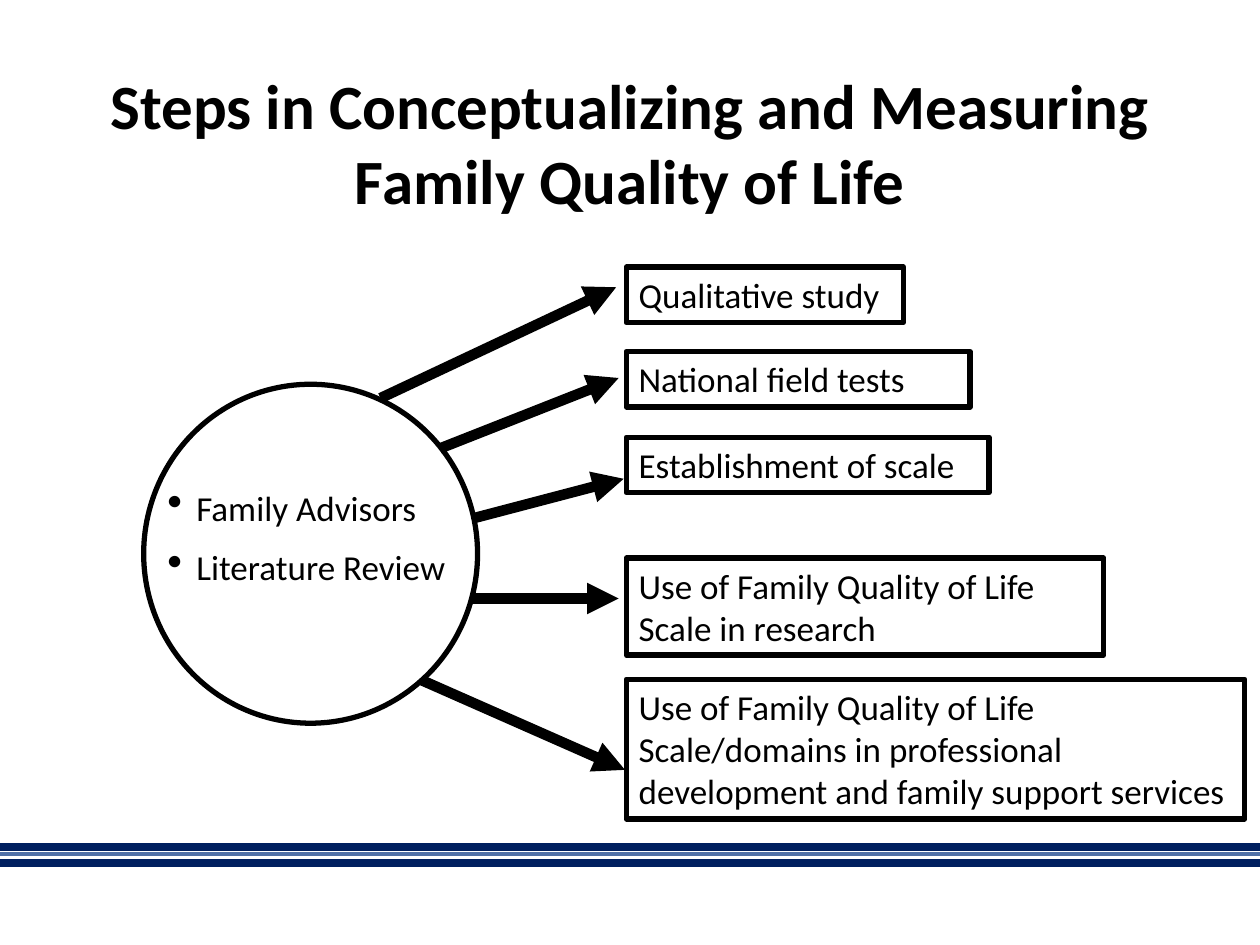
import pptx
import pptx.util
from lxml import etree
from pptx.dml.color import RGBColor
from pptx.enum.shapes import MSO_CONNECTOR, MSO_SHAPE
from pptx.enum.text import MSO_ANCHOR, PP_ALIGN
from pptx.oxml.ns import qn
from pptx.util import Inches, Pt

BLACK = RGBColor(0x00, 0x00, 0x00)
NAVY = RGBColor(0x00, 0x1F, 0x5F)
BLUE = RGBColor(0x50, 0x70, 0xA7)
FONT = "Calibri"

TITLE = "Steps in Conceptualizing and Measuring Family Quality of Life"
FOUNDATIONS = ["Family Advisors", "Literature Review"]

BOX_LEFT = 4.97
# text, top, width, height
STEPS = [
    ("Qualitative study", 2.12, 2.2, 0.44),
    ("National field tests", 2.79, 2.73, 0.44),
    ("Establishment of scale", 3.47, 2.88, 0.44),
    ("Use of Family Quality of Life Scale in research", 4.43, 3.79, 0.77),
    ("Use of Family Quality of Life Scale/domains in professional "
     "development and family support services", 5.39, 4.91, 1.11),
]
# start, end
ARROWS = [
    ((3.02, 3.16), (4.89, 2.28)),
    ((3.49, 3.56), (4.91, 3)),
    ((3.77, 4.11), (4.95, 3.8)),
    ((3.73, 4.75), (4.91, 4.75)),
    ((3.35, 5.4), (4.96, 6.11)),
]
# y, colour, width in points
STRIPES = [(6.72, NAVY, 4.5), (6.78, BLUE, 2.25), (6.85, NAVY, 4.5)]


def add_line(slide, start, end, color, width, arrow=False):
    line = slide.shapes.add_connector(
        MSO_CONNECTOR.STRAIGHT, *map(Inches, (*start, *end)))
    line.line.color.rgb = color
    line.line.width = Pt(width)
    properties = line._element.spPr
    if arrow:
        etree.SubElement(properties.find(qn("a:ln")), qn("a:tailEnd"), type="triangle")
    etree.SubElement(properties, qn("a:effectLst"))


def add_outline(slide, kind, left, top, width, height):
    shape = slide.shapes.add_shape(kind, *map(Inches, (left, top, width, height)))
    shape.shadow.inherit = False
    shape.fill.background()
    shape.line.color.rgb = BLACK
    shape.line.width = Pt(3)
    return shape


def set_font(paragraph, size, bold=False):
    paragraph.font.name = FONT
    paragraph.font.size = Pt(size)
    paragraph.font.bold = bold
    paragraph.font.color.rgb = BLACK


def add_bullet(paragraph):
    properties = paragraph._p.get_or_add_pPr()
    properties.set("marL", str(Inches(0.23)))
    properties.set("indent", str(-Inches(0.23)))
    etree.SubElement(properties, qn("a:buSzPct"), val="125000")
    etree.SubElement(properties, qn("a:buChar"), char="•")


def add_title(slide):
    title = slide.shapes.title
    title.left, title.top, title.width, title.height = map(
        Inches, (0.69, 0.4, 8.62, 1.45))
    frame = title.text_frame
    frame.text = TITLE
    frame.word_wrap = True
    frame.vertical_anchor = MSO_ANCHOR.MIDDLE
    frame.paragraphs[0].alignment = PP_ALIGN.CENTER
    set_font(frame.paragraphs[0], 36, bold=True)


def add_step(slide, text, top, width, height):
    box = add_outline(slide, MSO_SHAPE.RECTANGLE, BOX_LEFT, top, width, height)
    frame = box.text_frame
    frame.text = text
    frame.word_wrap = True
    frame.vertical_anchor = MSO_ANCHOR.TOP
    frame.paragraphs[0].alignment = PP_ALIGN.LEFT
    set_font(frame.paragraphs[0], 20)


def add_foundations(slide):
    add_outline(slide, MSO_SHAPE.OVAL, 1.14, 3.05, 2.65, 2.69)
    frame = slide.shapes.add_textbox(
        *map(Inches, (1.23, 3.81, 2.52, 0.94))).text_frame
    frame.word_wrap = True
    frame.text = "\n".join(FOUNDATIONS)
    for index, paragraph in enumerate(frame.paragraphs):
        add_bullet(paragraph)
        set_font(paragraph, 20)
        if index:
            paragraph.space_before = Pt(10)


def main():
    presentation = pptx.Presentation()
    presentation.slide_width = Inches(10)
    presentation.slide_height = Inches(7.5)
    slide = presentation.slides.add_slide(presentation.slide_layouts[5])

    for y, color, width in STRIPES:
        add_line(slide, (0, y), (10, y), color, width)
    add_title(slide)
    for step in STEPS:
        add_step(slide, *step)
    add_foundations(slide)
    for start, end in ARROWS:
        add_line(slide, start, end, BLACK, 6, arrow=True)

    presentation.save("out.pptx")


if __name__ == "__main__":
    main()
